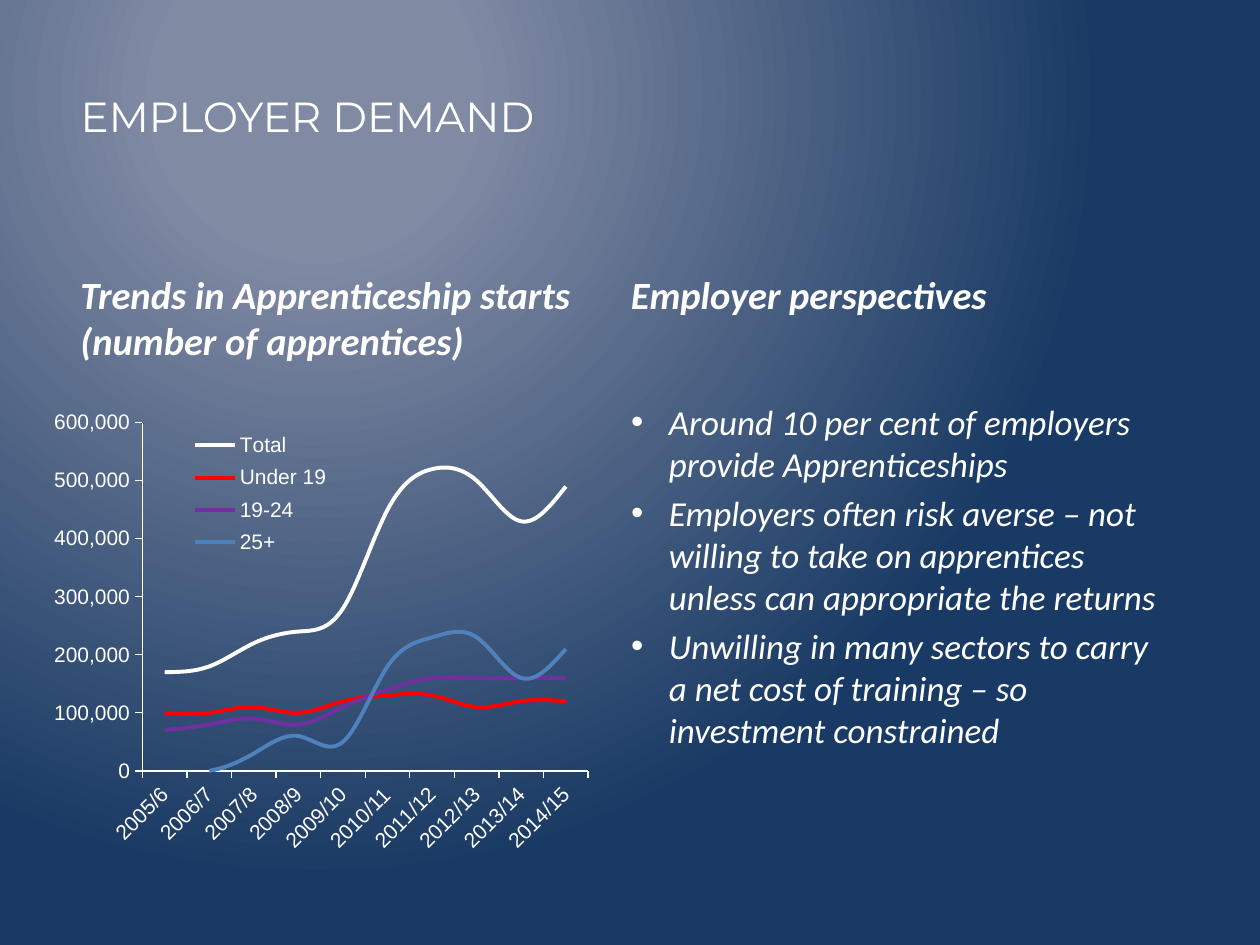
from lxml import etree
from pptx import Presentation
from pptx.chart.data import CategoryChartData
from pptx.dml.color import RGBColor
from pptx.enum.chart import XL_CHART_TYPE, XL_LEGEND_POSITION, XL_MARKER_STYLE, XL_TICK_MARK
from pptx.enum.text import MSO_ANCHOR, MSO_AUTO_SIZE, PP_ALIGN
from pptx.oxml.ns import qn
from pptx.util import Inches, Pt

LINE, RIGHT = XL_CHART_TYPE.LINE, XL_LEGEND_POSITION.RIGHT
NO_MARKER = XL_MARKER_STYLE.NONE
OUTSIDE, NO_TICK = XL_TICK_MARK.OUTSIDE, XL_TICK_MARK.NONE
TOP, LEFT, NO_AUTOFIT = MSO_ANCHOR.TOP, PP_ALIGN.LEFT, MSO_AUTO_SIZE.NONE

YEARS = ["2005/6", "2006/7", "2007/8", "2008/9", "2009/10",
         "2010/11", "2011/12", "2012/13", "2013/14", "2014/15"]
# Apprenticeship starts in thousands, with the line colour
STARTS = {
    "Total": ("FFFFFF", [170, 180, 220, 240, 280, 450, 520, 500, 430, 490]),
    "Under 19": ("FF0000", [100, 100, 110, 100, 120, 130, 130, 110, 120, 120]),
    "19-24": ("7030A0", [70, 80, 90, 80, 110, 140, 160, 160, 160, 160]),
    "25+": ("4F81BD", [0, 0, 30, 60, 50, 180, 230, 230, 160, 210]),
}
PERSPECTIVES = [
    "Around 10 per cent of employers provide Apprenticeships",
    "Employers often risk averse – not willing to take on apprentices "
    "unless can appropriate the returns",
    "Unwilling in many sectors to carry a net cost of training – so "
    "investment constrained",
]


def rgb(value):
    return RGBColor.from_string(value)


def set_layout(parent, before, x, y, w, h, inner=False):
    """Place a chart part by percentages of the chart area."""
    for old in parent.findall(qn("c:layout")):
        parent.remove(old)
    layout = etree.Element(qn("c:layout"))
    manual = etree.SubElement(layout, qn("c:manualLayout"))
    settings = [("layoutTarget", "inner")] if inner else []
    settings += [("xMode", "edge"), ("yMode", "edge")]
    settings += [(tag, value / 100) for tag, value in zip("xywh", (x, y, w, h))]
    for tag, value in settings:
        etree.SubElement(manual, qn(f"c:{tag}")).set("val", str(value))
    before.addprevious(layout)


class SlideBuilder:
    text_color = "FFFFFF"
    title_font, body_font, chart_font = "Montserrat", "Calibri", "Arial"

    def __init__(self, slide):
        self.slide = slide

    def style(self, font, name, size, bold=False, italic=False):
        font.name, font.size = name, Pt(size)
        font.bold, font.italic = bold, italic
        font.color.rgb = rgb(self.text_color)

    def background(self, inner, outer):
        fill = self.slide.background.fill
        fill.gradient()
        for stop, color, position in zip(fill.gradient_stops, (inner, outer), (0.2, 1)):
            stop.color.rgb = rgb(color)
            stop.position = position
        linear = self.slide.element.find(".//" + qn("a:lin"))
        circle = etree.Element(qn("a:path"), path="circle")
        etree.SubElement(circle, qn("a:fillToRect"),
                         l="50000", t="20000", r="100000", b="100000")
        linear.getparent().replace(linear, circle)

    def title(self, text, x, y, w, h):
        title = self.slide.shapes.title
        title.left, title.top, title.width, title.height = map(Inches, (x, y, w, h))
        frame = title.text_frame
        frame.text = text
        frame.vertical_anchor, frame.auto_size = TOP, NO_AUTOFIT
        frame.paragraphs[0].alignment = LEFT
        self.style(frame.paragraphs[0].runs[0].font, self.title_font, 24)

    def text(self, lines, x, y, w, h, size, bold=False, bullets=False):
        frame = self.slide.shapes.add_textbox(*map(Inches, (x, y, w, h))).text_frame
        frame.word_wrap = True
        frame.text = "\n".join(lines)
        for paragraph in frame.paragraphs:
            paragraph.space_before = Pt(4)
            self.style(paragraph.runs[0].font, self.body_font, size, bold, italic=True)
            if bullets:
                props = paragraph._p.get_or_add_pPr()
                props.set("marL", str(Inches(0.3)))
                props.set("indent", str(Inches(-0.3)))
                etree.SubElement(props, qn("a:buFont")).set("typeface", "Arial")
                etree.SubElement(props, qn("a:buChar")).set("char", "•")

    def axis(self, axis):
        axis.has_major_gridlines = False
        axis.major_tick_mark, axis.minor_tick_mark = OUTSIDE, NO_TICK
        axis.format.line.color.rgb = rgb(self.text_color)
        axis.format.line.width = Pt(0.75)
        self.style(axis.tick_labels.font, self.chart_font, 12)

    def line_chart(self, categories, series, x, y, w, h):
        data = CategoryChartData(number_format="#,##0")
        data.categories = categories
        for name, (_, thousands) in series.items():
            data.add_series(name, [value * 1000 for value in thousands])
        chart = self.slide.shapes.add_chart(
            LINE, *map(Inches, (x, y, w, h)), data).chart
        chart.has_title = False
        self.style(chart.font, self.chart_font, 12)
        chart.plots[0].vary_by_categories = False

        for line, (color, _) in zip(chart.plots[0].series, series.values()):
            line.smooth = True
            line.marker.style = NO_MARKER
            line.format.line.color.rgb = rgb(color)
            line.format.line.width = Pt(2.25)

        years, starts = chart.category_axis, chart.value_axis
        self.axis(years)
        self.axis(starts)
        years._element.find(qn("c:txPr")).find(qn("a:bodyPr")).set("rot", "-2700000")
        starts.minimum_scale, starts.maximum_scale = 0, 600000
        starts.major_unit = 100000
        starts.tick_labels.number_format = "#,##0"
        starts.tick_labels.number_format_is_linked = False

        chart.has_legend = True
        legend = chart.legend
        legend.position, legend.include_in_layout = RIGHT, False
        self.style(legend.font, self.chart_font, 12)
        key = legend._element
        set_layout(key, key.find(qn("c:overlay")), 22.5, 6.4, 28, 30)
        plot_area = chart._chartSpace.chart.plotArea
        set_layout(plot_area, plot_area.find(qn("c:lineChart")),
                   15.5, 6.1, 79.1, 74.9, inner=True)


def main():
    prs = Presentation()
    prs.slide_width, prs.slide_height = Inches(10), Inches(7.5)
    builder = SlideBuilder(prs.slides.add_slide(prs.slide_layouts[5]))
    left, right, heading_top, content_top = 0.54, 4.91, 2.1, 3.13

    # Background and title
    builder.background("808AA3", "193A64")
    builder.title("EMPLOYER DEMAND", left, 0.67, 3.95, 1.17)

    # Left column: trends
    builder.text(["Trends in Apprenticeship starts (number of apprentices)"],
                 left, heading_top, 4.14, 0.71, 22, bold=True)
    builder.line_chart(YEARS, STARTS, 0.43, content_top, 4.48, 3.69)

    # Right column: perspectives
    builder.text(["Employer perspectives"], right, heading_top, 4, 0.71, 22, bold=True)
    builder.text(PERSPECTIVES, right, content_top, 4.42, 3.15, 20, bullets=True)

    prs.save("out.pptx")


if __name__ == "__main__":
    main()
